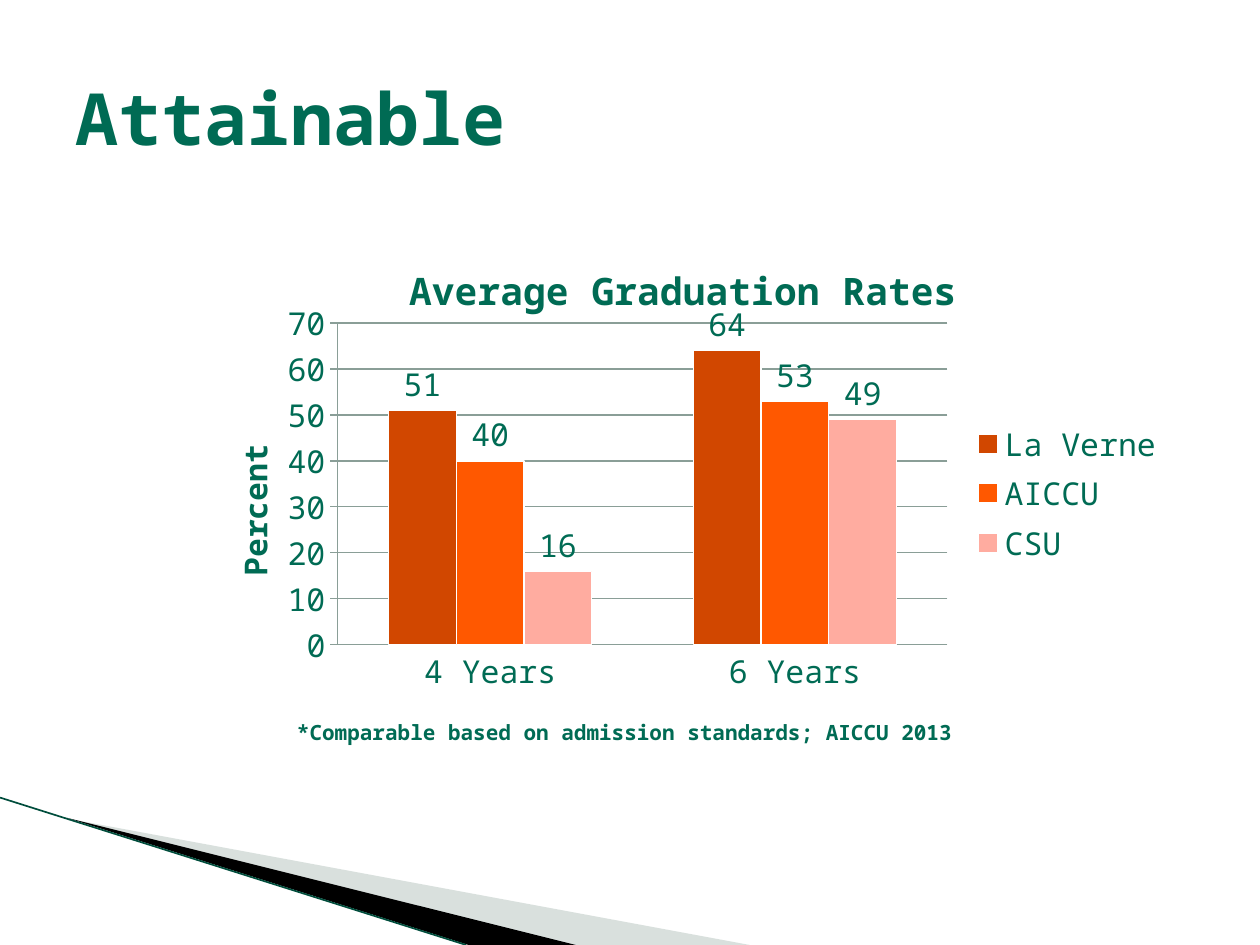
from dataclasses import dataclass

from lxml import etree
from pptx import Presentation
from pptx.chart.data import CategoryChartData
from pptx.dml.color import RGBColor
from pptx.enum.chart import XL_CHART_TYPE, XL_LABEL_POSITION, XL_LEGEND_POSITION, XL_TICK_MARK
from pptx.enum.shapes import MSO_CONNECTOR
from pptx.enum.text import MSO_ANCHOR, PP_ALIGN
from pptx.oxml.ns import qn
from pptx.util import Inches, Pt

CLUSTERED = XL_CHART_TYPE.COLUMN_CLUSTERED
OUTSIDE_END = XL_LABEL_POSITION.OUTSIDE_END
LEGEND_RIGHT = XL_LEGEND_POSITION.RIGHT
TICK_NONE, TICK_OUT = XL_TICK_MARK.NONE, XL_TICK_MARK.OUTSIDE
STRAIGHT = MSO_CONNECTOR.STRAIGHT
MIDDLE, LEFT = MSO_ANCHOR.MIDDLE, PP_ALIGN.LEFT


@dataclass(frozen=True)
class Theme:
    font: str = "Noto Sans Mono"
    green: str = "006B54"
    edge: str = "004D3C"
    sage: str = "A0B3AC"
    grid: str = "8A9E97"
    black: str = "000000"
    white: str = "FFFFFF"
    bars: tuple = ("D14700", "FF5800", "FFACA0")
    title_size: float = 41
    chart_title_size: float = 21.6
    body_size: float = 18
    note_size: float = 12


def rgb(value):
    return RGBColor.from_string(value)


def set_layout(node, index, inner=False, **fractions):
    """Place a chart part by fractions of the chart's size."""
    for old in node.findall(qn("c:layout")):
        node.remove(old)
    layout = etree.Element(qn("c:layout"))
    manual = etree.SubElement(layout, qn("c:manualLayout"))
    if inner:
        etree.SubElement(manual, qn("c:layoutTarget"), val="inner")
    for name in ("x", "y"):
        etree.SubElement(manual, qn(f"c:{name}Mode"), val="edge")
    for name, value in fractions.items():
        etree.SubElement(manual, qn(f"c:{name}"), val=str(value))
    node.insert(index, layout)


class SlideBuilder:
    def __init__(self, slide, theme):
        self.s = slide
        self.theme = theme

    def style_font(self, font, size, bold=False):
        font.name = self.theme.font
        font.size = Pt(size)
        font.bold = bold
        font.color.rgb = rgb(self.theme.green)

    def title(self, text, left, top, width, height):
        sp = self.s.shapes.title
        sp.left, sp.top = Inches(left), Inches(top)
        sp.width, sp.height = Inches(width), Inches(height)
        tf = sp.text_frame
        tf.text = text
        tf.vertical_anchor = MIDDLE
        p = tf.paragraphs[0]
        p.alignment = LEFT
        self.style_font(p.runs[0].font, self.theme.title_size, True)

    def polygon(self, points, color, opacity=100):
        corners = [(Inches(x), Inches(y)) for x, y in points]
        builder = self.s.shapes.build_freeform(*corners[0])
        builder.add_line_segments(corners[1:], close=True)
        sp = builder.convert_to_shape()
        sp.shadow.inherit = False
        sp.line.fill.background()
        sp.fill.solid()
        sp.fill.fore_color.rgb = rgb(color)
        if opacity < 100:
            clr = sp.fill._xPr.find(".//" + qn("a:srgbClr"))
            etree.SubElement(clr, qn("a:alpha"), val=str(opacity * 1000))

    def line(self, x1, y1, x2, y2, color, width):
        ln = self.s.shapes.add_connector(
            STRAIGHT, Inches(x1), Inches(y1), Inches(x2), Inches(y2))
        ln.line.color.rgb = rgb(color)
        ln.line.width = Pt(width)
        etree.SubElement(ln._element.spPr, qn("a:effectLst"))

    def chart_text(self, title, text, size, x, y):
        title.text_frame.text = text
        self.style_font(title.text_frame.paragraphs[0].runs[0].font, size, True)
        set_layout(title._element, 1, x=x, y=y)

    def axis(self, axis, text, size, x, y, tick):
        self.chart_text(axis.axis_title, text, size, x, y)
        axis.major_tick_mark = tick
        axis.minor_tick_mark = TICK_NONE
        axis.format.line.color.rgb = rgb(self.theme.grid)
        axis.format.line.width = Pt(0.75)

    def column_chart(self, left, top, width, height, categories, series):
        t = self.theme
        data = CategoryChartData()
        data.categories = categories
        for name, values in series:
            data.add_series(name, values)
        chart = self.s.shapes.add_chart(
            CLUSTERED, Inches(left), Inches(top), Inches(width), Inches(height), data).chart
        self.style_font(chart.font, t.body_size)
        self.chart_text(chart.chart_title, "Average Graduation Rates",
                        t.chart_title_size, 0.22, 0.06)
        chart.chart_title.include_in_layout = False

        # Axes and gridlines
        self.axis(chart.category_axis,
                  "*Comparable based on admission standards; AICCU 2013",
                  t.note_size, 0.11, 0.9, TICK_NONE)
        value_axis = chart.value_axis
        self.axis(value_axis, "Percent", t.body_size, 0.04, 0.4, TICK_OUT)
        value_axis.minimum_scale, value_axis.maximum_scale = 0, 70
        value_axis.major_unit = 10
        grid = value_axis.major_gridlines.format.line
        grid.color.rgb = rgb(t.grid)
        grid.width = Pt(0.75)

        # Columns and their values
        plot = chart.plots[0]
        plot.vary_by_categories = False
        plot.gap_width, plot.overlap = 150, 0
        for ser, color in zip(plot.series, t.bars):
            ser.format.fill.solid()
            ser.format.fill.fore_color.rgb = rgb(color)
            ser.format.line.color.rgb = rgb(t.white)
            ser.format.line.width = Pt(0.75)
            labels = ser.data_labels
            labels.show_value = True
            labels.position = OUTSIDE_END
            self.style_font(labels.font, t.body_size)

        # Legend and plot position
        chart.has_legend = True
        chart.legend.position = LEGEND_RIGHT
        chart.legend.include_in_layout = False
        self.style_font(chart.legend.font, t.body_size)
        plot_area = chart._chartSpace.find(".//" + qn("c:plotArea"))
        set_layout(plot_area, 0, inner=True, x=0.155, y=0.188, w=0.614, h=0.59)


def main():
    prs = Presentation()
    prs.slide_width, prs.slide_height = Inches(10), Inches(7.5)
    theme = Theme()
    slide = SlideBuilder(prs.slides.add_slide(prs.slide_layouts[5]), theme)

    # Corner wedges
    slide.polygon([(0.55, 6.5), (5.95, 7.5), (4.56, 7.5)], theme.sage, 40)
    slide.polygon([(0.53, 6.49), (4.57, 7.5), (3.72, 7.5)], theme.black)
    slide.line(0, 6.33, 3.7, 7.5, theme.edge, 0.95)

    # Heading and chart
    slide.title("Attainable", 0.5, 0.3, 9, 1.25)
    slide.column_chart(1.46, 1.75, 7.88, 4.33, ["4 Years", "6 Years"], [
        ("La Verne", (51, 64)),
        ("AICCU", (40, 53)),
        ("CSU", (16, 49)),
    ])
    prs.save("out.pptx")


if __name__ == "__main__":
    main()
